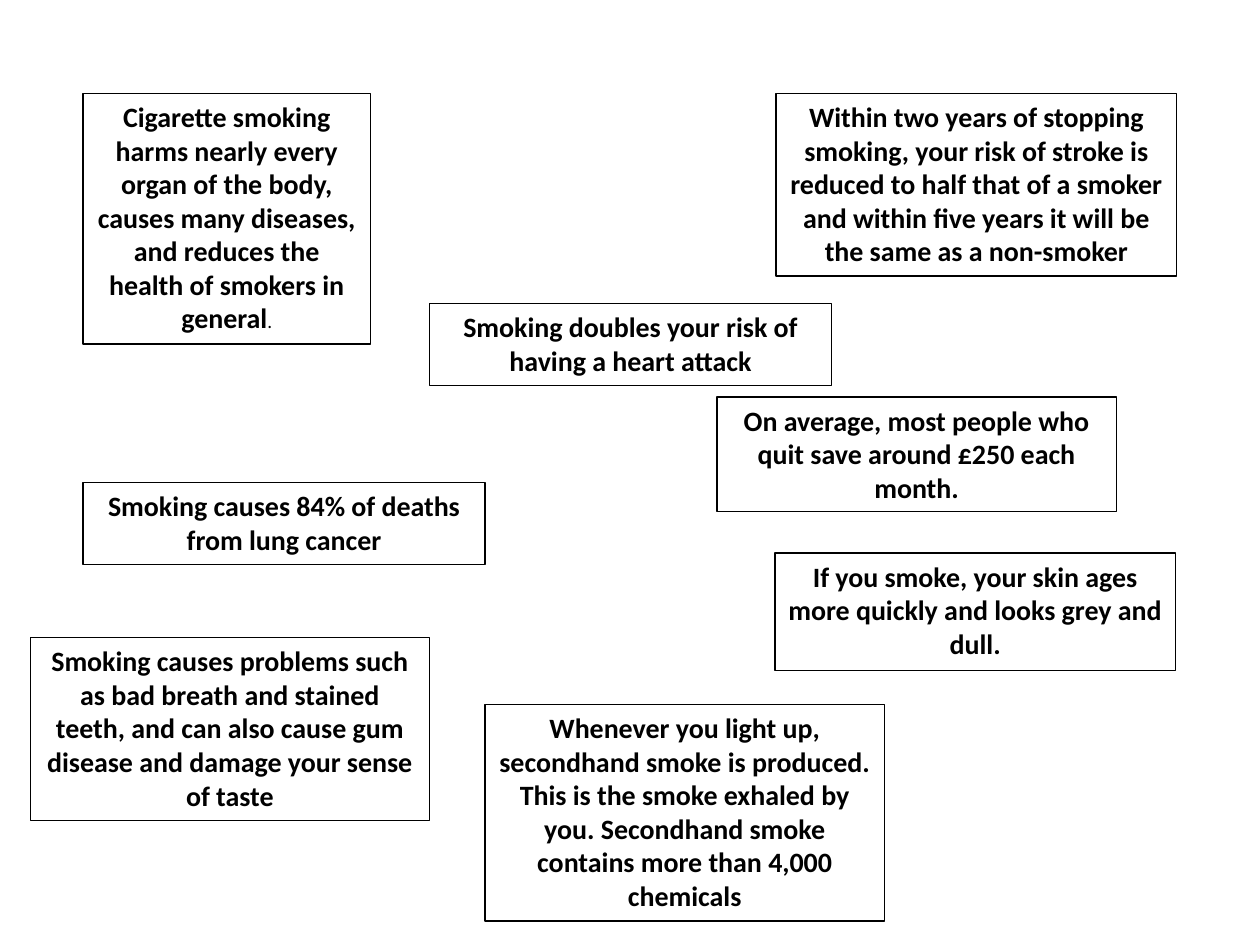
"""Build a slide of boxed facts about smoking."""
from dataclasses import dataclass

from pptx import Presentation
from pptx.dml.color import RGBColor
from pptx.enum.shapes import MSO_SHAPE
from pptx.enum.text import MSO_ANCHOR, MSO_AUTO_SIZE, PP_ALIGN
from pptx.slide import Slide
from pptx.util import Inches, Pt

BLACK = "000000"
WHITE = "FFFFFF"
FACT_FORMAT = {"name": "Calibri", "size": Pt(16), "bold": True}
STOP_FORMAT = {"name": "Calibri", "size": Pt(11), "bold": False}


@dataclass
class Fact:
    left: float
    top: float
    width: float
    height: float
    text: str
    final_stop: str = ""
    space_after: float = 0
    auto_size: MSO_AUTO_SIZE = MSO_AUTO_SIZE.SHAPE_TO_FIT_TEXT


FACTS = [
    Fact(0.66, 0.74, 2.28, 1.99,
         "Cigarette smoking harms nearly every organ of the body, causes many "
         "diseases, and reduces the health of smokers in general",
         final_stop=".", space_after=8),
    Fact(3.85, 5.59, 3.17, 1.72,
         "Whenever you light up, secondhand smoke is produced. This is the smoke "
         "exhaled by you. Secondhand smoke contains more than 4,000 chemicals"),
    Fact(5.69, 3.15, 3.17, 0.91,
         "On average, most people who quit save around £250 each month."),
    Fact(0.66, 3.83, 3.19, 0.65,
         "Smoking causes 84% of deaths from lung cancer"),
    Fact(6.16, 0.74, 3.18, 1.45,
         "Within two years of stopping smoking, your risk of stroke is reduced to "
         "half that of a smoker and within five years it will be the same as a "
         "non-smoker"),
    Fact(3.41, 2.41, 3.19, 0.65,
         "Smoking doubles your risk of having a heart attack"),
    Fact(0.24, 5.06, 3.17, 1.45,
         "Smoking causes problems such as bad breath and stained teeth, and can "
         "also cause gum disease and damage your sense of taste"),
    Fact(6.15, 4.39, 3.18, 0.93,
         "If you smoke, your skin ages more quickly and looks grey and dull.",
         auto_size=MSO_AUTO_SIZE.NONE),
]


def color(value: str) -> RGBColor:
    return RGBColor.from_string(value)


def add_run(paragraph, text: str, font_format: dict) -> None:
    run = paragraph.add_run()
    run.text = text
    for name, value in font_format.items():
        setattr(run.font, name, value)
    run.font.color.rgb = color(BLACK)


def draw_fact(slide: Slide, fact: Fact) -> None:
    shape = slide.shapes.add_shape(
        MSO_SHAPE.RECTANGLE, Inches(fact.left), Inches(fact.top),
        Inches(fact.width), Inches(fact.height))
    shape.shadow.inherit = False
    shape.fill.solid()
    shape.fill.fore_color.rgb = color(WHITE)
    shape.line.color.rgb = color(BLACK)
    shape.line.width = Pt(0.75)
    frame_format = {"word_wrap": True, "auto_size": fact.auto_size,
                    "vertical_anchor": MSO_ANCHOR.TOP}
    for name, value in frame_format.items():
        setattr(shape.text_frame, name, value)
    paragraph = shape.text_frame.paragraphs[0]
    paragraph.alignment = PP_ALIGN.CENTER
    paragraph.space_after = Pt(fact.space_after)
    add_run(paragraph, fact.text, FACT_FORMAT)
    if fact.final_stop:
        add_run(paragraph, fact.final_stop, STOP_FORMAT)


def main() -> None:
    presentation = Presentation()
    presentation.slide_width = Inches(10)
    presentation.slide_height = Inches(7.5)
    slide = presentation.slides.add_slide(presentation.slide_layouts[6])
    for fact in FACTS:
        draw_fact(slide, fact)
    presentation.save("out.pptx")


if __name__ == "__main__":
    main()
